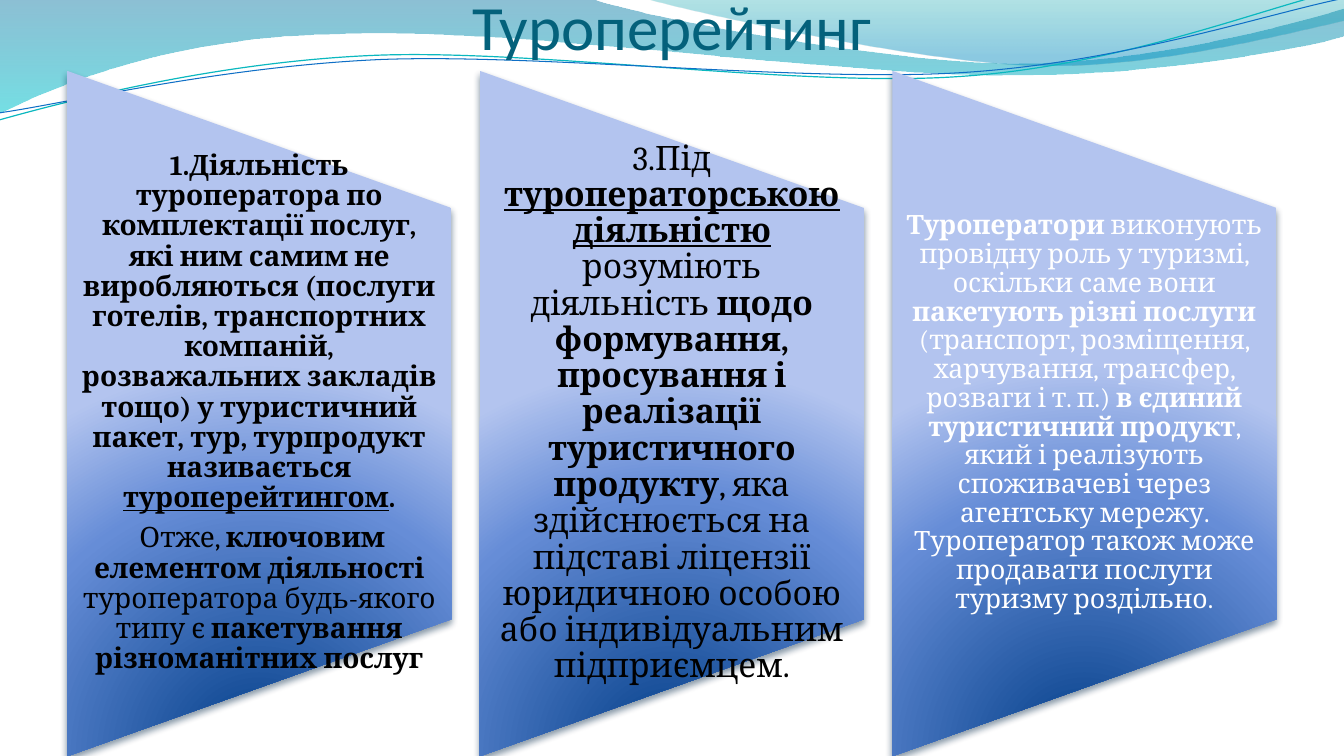
from pptx import Presentation
from pptx.util import Pt
from pptx.dml.color import RGBColor
from pptx.enum.shapes import MSO_SHAPE
from pptx.enum.text import MSO_ANCHOR, MSO_AUTO_SIZE, PP_ALIGN
from pptx.oxml import parse_xml
from pptx.oxml.ns import nsdecls, qn

hex_color = RGBColor.from_string


def trace(start, segments, close):
    """Draw an outline from line (x, y) and curve (three points) segments."""
    points = [(Pt(segment[i]), Pt(segment[i + 1]))
              for segment in segments for i in range(0, len(segment), 2)]
    builder = page.shapes.build_freeform(Pt(start[0]), Pt(start[1]), scale=1.0)
    builder.add_line_segments(points, close=close)
    outline = builder.convert_to_shape()
    outline.shadow.inherit = False
    # Join each three control points into one Bezier curve
    steps = iter(list(outline.element.iter(qn("a:lnTo"))))
    for segment in segments:
        first = next(steps)
        if len(segment) == 6:
            curve = parse_xml(f'<a:cubicBezTo {nsdecls("a")}/>')
            first.addprevious(curve)
            for step in (first, next(steps), next(steps)):
                curve.append(step[0])
                step.getparent().remove(step)
    return outline


def paint(shape, stops, direction):
    """Fill a shape with gradient stops of (position, colour, opacity)."""
    stop_xml = "".join(
        f'<a:gs pos="{place * 1000}"><a:srgbClr val="{color}">'
        f'<a:alpha val="{opacity * 1000}"/></a:srgbClr></a:gs>'
        for place, color, opacity in stops)
    shape.line.fill.background()
    shape.fill.background()
    properties = shape.element.spPr
    properties.replace(properties.find(qn("a:noFill")), parse_xml(
        f'<a:gradFill {nsdecls("a")} rotWithShape="0"><a:gsLst>{stop_xml}</a:gsLst>'
        f'{direction}</a:gradFill>'))


deck = Presentation()
deck.slide_width, deck.slide_height = Pt(960), Pt(540)
page = deck.slides.add_slide(deck.slide_layouts[5])

# Translucent waves along the top
waves = [
    ((0, 0),
     [(422.6, -0.7), (456.5, 12.2, 637.2, 45.4, 727.9, 45.4),
      (819.4, 45.4, 920.2, 18.7, 960, 6.5), (961.2, 25.9),
      (943.9, 31.7, 835.2, 54.7, 715.7, 54), (596.9, 54, 366.5, 20.2, 247, 24.5),
      (123.8, 25.9, 43.9, 59.8, -0.7, 81.4)],
     [(0, "0074A1", 45), (100, "00C6CF", 55)]),
    ((460, -0.7),
     [(488.9, 7.9, 654.5, 44.6, 738, 46.8), (821.5, 49.7, 923, 23, 960, 15.1), (960, 0)],
     [(0, "00A1A9", 30), (80, "008BBF", 45)]),
]
for start, segments, stops in waves:
    paint(trace(start, segments, True), stops, '<a:lin ang="5400000" scaled="1"/>')

# Thin lines following the waves, slightly tilted
strands = [
    ((-2.3, 63.1),
     [(45.1, 52.3, 152.1, 29.2, 266, 29.6), (379.8, 29.9, 567.7, 66.8, 683.1, 64.4),
      (798.6, 62.6, 902.6, 25.8, 960.1, 15.4)], "0AB8BF", 0.85),
    ((-1.3, 57.9),
     [(44.4, 53.7, 157.1, 32.3, 272.4, 32.7), (386.9, 33.8, 572.2, 63.4, 686.9, 61.6),
      (802.3, 59.8, 904.7, 30.1, 962, 21.3)], "0F6FC6", 0.75),
]
for start, segments, color, weight in strands:
    strand = trace(start, segments, False)
    strand.rotation = 357.3
    strand.fill.background()
    strand.line.color.rgb = hex_color(color)
    strand.line.width = Pt(weight)

# Title, brought in front of the waves
title = page.shapes.title
title.element.getparent().append(title.element)
title.left, title.top, title.width, title.height = Pt(48), Pt(0), Pt(864), Pt(45)
frame = title.text_frame
frame.text = "Туроперейтинг"
frame.auto_size = MSO_AUTO_SIZE.NONE
frame.vertical_anchor = MSO_ANCHOR.BOTTOM
frame.margin_left = frame.margin_right = frame.margin_bottom = 0
frame.margin_top = Pt(3.6)
para = frame.paragraphs[0]
para.alignment = PP_ALIGN.CENTER
font = para.runs[0].font
font.name, font.size, font.color.rgb = "Calibri", Pt(45), hex_color("04617B")

# Panels: text size, colour, side margin, paragraphs of (text, style) spans
panels = [
    (20, "000000", 10, [
        [("1.Діяльність туроператора по комплектації послуг, які ним самим не виробляються "
          "(послуги готелів, транспортних компаній, розважальних закладів тощо) у туристичний "
          "пакет, тур, турпродукт називається ", "b"),
         ("туроперейтингом", "bu"), (".", "b")],
        [(" Отже, ", ""), ("ключовим елементом діяльності", "b"),
         (" туроператора будь-якого типу є ", ""),
         ("пакетування різноманітних послуг", "b")]]),
    (24, "000000", 12, [
        [("3.Під ", ""), ("туроператорською діяльністю", "bu"),
         (" розуміють діяльність ", ""),
         ("щодо формування, просування і реалізації туристичного продукту", "b"),
         (", яка здійснюється на підставі ліцензії юридичною особою або "
          "індивідуальним підприємцем.", "")]]),
    (19, "FFFFFF", 9.5, [
        [("Туроператори ", "b"),
         ("виконують провідну роль у туризмі, оскільки саме вони ", ""),
         ("пакетують різні послуги", "b"),
         (" (транспорт, розміщення, харчування, трансфер, розваги і т. п.) ", ""),
         ("в єдиний туристичний продукт", "b"),
         (", який і реалізують споживачеві через агентську мережу. Туроператор також "
          "може продавати послуги туризму роздільно.", "")]]),
]
panel_stops = [(0, "003D87", 100), (68, "668DD7", 100), (100, "B3C4EF", 100)]
panel_glow = ('<a:path path="circle"><a:fillToRect l="50000" t="130000" '
              'r="50000" b="-30000"/></a:path>')
width, height, middle = 274.4, 489.6, 295.4

for index, (size, color, margin, paragraphs) in enumerate(panels):
    left = 48 + index * 294.7

    # Trapezoid turned on its side
    panel = page.shapes.add_shape(
        MSO_SHAPE.FLOWCHART_MANUAL_OPERATION,
        Pt(left + (width - height) / 2), Pt(middle - width / 2), Pt(height), Pt(width))
    panel.rotation = 270
    paint(panel, panel_stops, panel_glow)
    panel.shadow.inherit = False
    panel.element.spPr.find(qn("a:effectLst")).append(parse_xml(
        f'<a:outerShdw {nsdecls("a")} blurRad="{Pt(4.5)}" dist="{Pt(3)}" dir="5400000" '
        'rotWithShape="0"><a:srgbClr val="042747"><a:alpha val="48000"/></a:srgbClr>'
        '</a:outerShdw>'))

    # Upright text over the panel
    box = page.shapes.add_textbox(Pt(left), Pt(148.1), Pt(width), Pt(293.8))
    frame = box.text_frame
    frame.word_wrap = True
    frame.vertical_anchor = MSO_ANCHOR.MIDDLE
    frame.margin_left = frame.margin_right = Pt(margin)
    frame.margin_top = frame.margin_bottom = 0
    for number, spans in enumerate(paragraphs):
        para = frame.add_paragraph() if number else frame.paragraphs[0]
        para.alignment = PP_ALIGN.CENTER
        para.line_spacing = 0.9
        para.space_after = Pt(0.35 * size)
        for text, style in spans:
            span = para.add_run()
            span.text = text
            font = span.font
            font.name, font.size, font.color.rgb = "Cambria", Pt(size), hex_color(color)
            font.bold, font.underline = "b" in style, "u" in style

deck.save("out.pptx")
